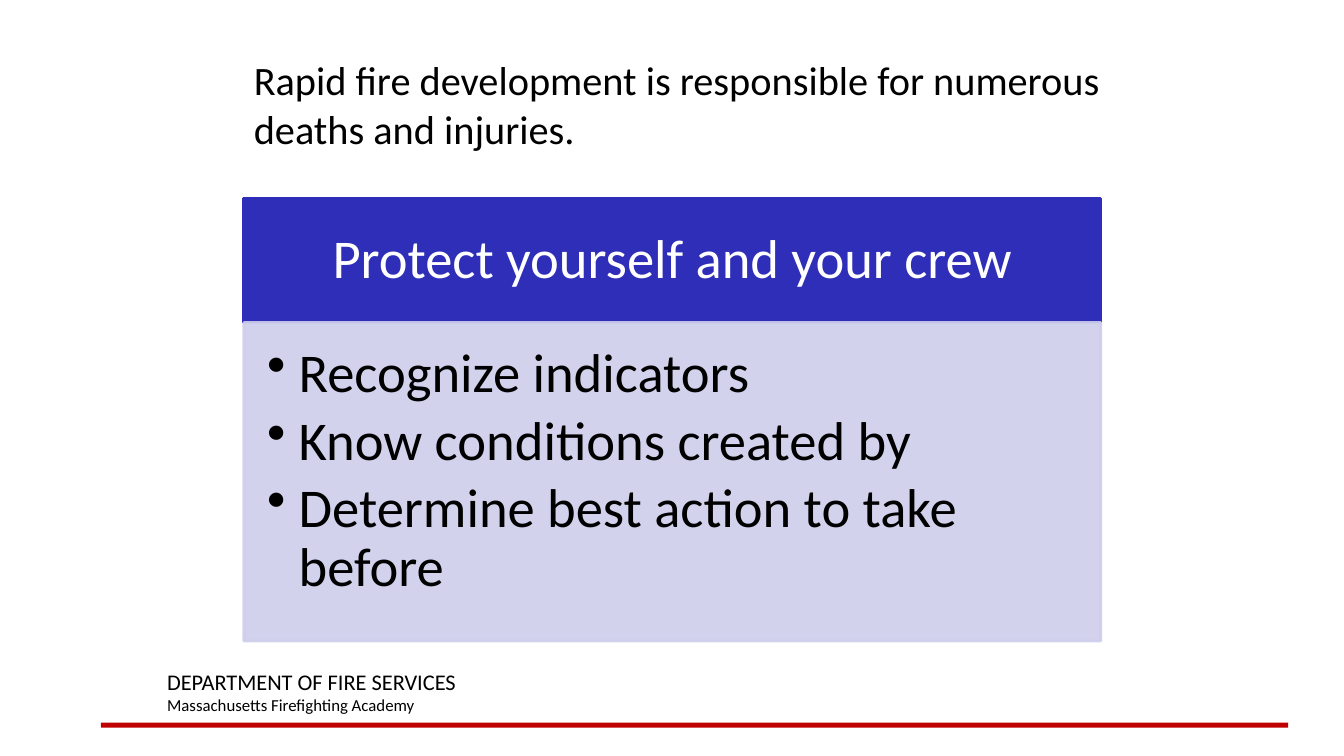
from dataclasses import dataclass

from lxml import etree
from pptx import Presentation
from pptx.dml.color import RGBColor
from pptx.enum.shapes import MSO_SHAPE
from pptx.enum.text import MSO_ANCHOR, PP_ALIGN
from pptx.oxml.ns import qn
from pptx.util import Pt

RECTANGLE = MSO_SHAPE.RECTANGLE
TOP, MIDDLE = MSO_ANCHOR.TOP, MSO_ANCHOR.MIDDLE
LEFT, CENTER = PP_ALIGN.LEFT, PP_ALIGN.CENTER


@dataclass(frozen=True)
class Theme:
    """Colours, font and type sizes of the slide."""

    font: str = "Calibri"
    black: RGBColor = RGBColor(0x00, 0x00, 0x00)
    white: RGBColor = RGBColor(0xFF, 0xFF, 0xFF)
    red: RGBColor = RGBColor(0xC0, 0x00, 0x00)
    blue: RGBColor = RGBColor(0x2E, 0x2E, 0xB9)
    lavender: RGBColor = RGBColor(0xCE, 0xCE, 0xEC)
    title: float = 28.8
    panel: float = 39
    department: float = 16
    academy: float = 12


THEME = Theme()
PANEL_LEFT, PANEL_WIDTH = 174.24, 612
HEADING_TOP, HEADING_HEIGHT = 141.84, 88.56
BULLET_INDENT = 22.5
ACTIONS = [
    "Recognize indicators",
    "Know conditions created by",
    "Determine best action to take before",
]


def apply_format(target, values):
    """Set each named attribute of the target."""
    for name, value in values.items():
        setattr(target, name, value)


def set_alpha(shape, percent):
    """Make the fill and line of a shape partly transparent."""
    for color in shape._element.spPr.iter(qn("a:srgbClr")):
        etree.SubElement(color, qn("a:alpha"), val=str(percent * 1000))


def add_bullet(paragraph):
    """Give a paragraph a round bullet with a hanging indent."""
    properties = paragraph._p.get_or_add_pPr()
    indent = int(Pt(BULLET_INDENT))
    properties.set("marL", str(indent))
    properties.set("indent", str(-indent))
    etree.SubElement(properties, qn("a:buChar"), char="•")


def write_text(shape, lines, color, margins=(7.2, 3.6, 7.2, 3.6), anchor=TOP,
               bullets=False, **paragraph_format):
    """Fill a shape with paragraphs given as pairs of text and size."""
    frame = shape.text_frame
    sides = ("margin_left", "margin_top", "margin_right", "margin_bottom")
    apply_format(frame, {"word_wrap": True, "vertical_anchor": anchor})
    apply_format(frame, {side: Pt(margin) for side, margin in zip(sides, margins)})
    for index, (text, size) in enumerate(lines):
        paragraph = frame.add_paragraph() if index else frame.paragraphs[0]
        apply_format(paragraph, {"alignment": LEFT, **paragraph_format})
        if bullets:
            add_bullet(paragraph)
        run = paragraph.add_run()
        run.text = text
        apply_format(run.font, {"name": THEME.font, "size": Pt(size)})
        run.font.color.rgb = color


def add_text_box(slide, box, lines):
    """Add a black, wrapped text box."""
    shape = slide.shapes.add_textbox(*map(Pt, box))
    write_text(shape, lines, THEME.black)


def add_rectangle(slide, box, color, line_width=0):
    """Add a flat rectangle, outlined in its own colour if a width is given."""
    shape = slide.shapes.add_shape(RECTANGLE, *map(Pt, box))
    shape.shadow.inherit = False
    shape.fill.solid()
    shape.fill.fore_color.rgb = color
    if line_width:
        shape.line.color.rgb = color
        shape.line.width = Pt(line_width)
    else:
        shape.line.fill.background()
    return shape


def add_action_panel(slide):
    """Add the heading bar and the bulleted panel that hangs below it."""
    heading = add_rectangle(
        slide, (PANEL_LEFT, HEADING_TOP, PANEL_WIDTH, HEADING_HEIGHT), THEME.blue, 2)
    write_text(heading, [("Protect yourself and your crew", THEME.panel)], THEME.white,
               (21.6, 12.2, 21.6, 12.2), MIDDLE, alignment=CENTER, line_spacing=0.9)
    body = add_rectangle(
        slide, (PANEL_LEFT, HEADING_TOP + HEADING_HEIGHT, PANEL_WIDTH, 227.52),
        THEME.lavender, 2)
    set_alpha(body, 90)
    write_text(body, [(action, THEME.panel) for action in ACTIONS], THEME.black,
               (16.6, 16.6, 21.6, 24.5), bullets=True, line_spacing=0.9,
               space_after=Pt(5.85))


def main():
    """Build the slide and save it."""
    presentation = Presentation()
    apply_format(presentation, {"slide_width": Pt(960), "slide_height": Pt(540)})
    slide = presentation.slides.add_slide(presentation.slide_layouts[6])
    add_rectangle(slide, (72, 516.24, 848.16, 3.6), THEME.red)
    add_text_box(slide, (112.32, 473.76, 408.24, 41.04), [
        ("DEPARTMENT OF FIRE SERVICES", THEME.department),
        ("Massachusetts Firefighting Academy", THEME.academy),
    ])
    add_action_panel(slide)
    add_text_box(slide, (PANEL_LEFT, 36, 635.76, 72), [
        ("Rapid fire development is responsible for numerous deaths and injuries.",
         THEME.title),
    ])
    presentation.save("out.pptx")


if __name__ == "__main__":
    main()
